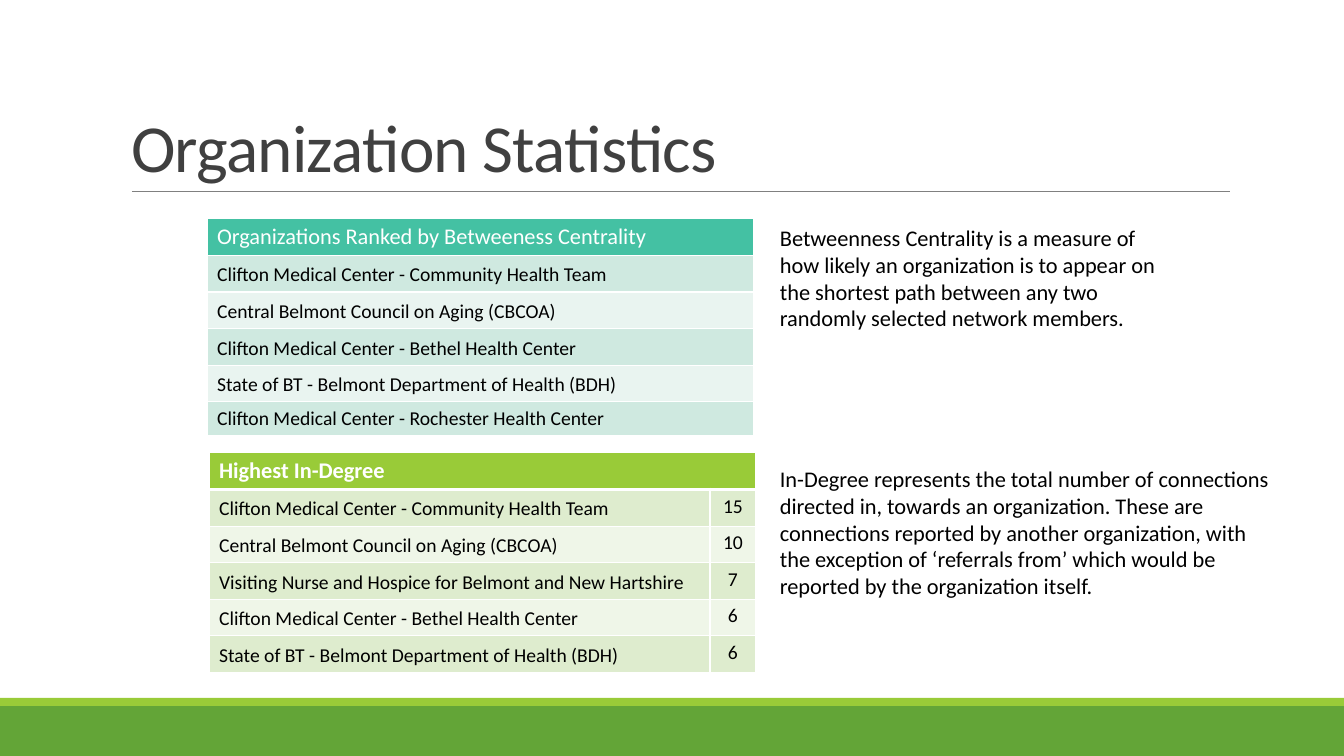
from pptx import Presentation
from pptx.dml.color import RGBColor
from pptx.enum.shapes import MSO_CONNECTOR, MSO_SHAPE
from pptx.enum.text import MSO_ANCHOR, MSO_AUTO_SIZE, PP_ALIGN
from pptx.oxml.ns import qn
from pptx.util import Pt
from lxml.etree import SubElement

TITLE = "Organization Statistics"
BARS = [((0, 706, 1344, 50), "63A537"), ((0, 698, 1344, 8), "99CB38")]
RULE = (132, 191, 1230, 191)
TABLES = [
    {
        "at": (209, 452), "cols": [501, 46], "last": 37, "rule": 3, "bold": True,
        "head": "Highest In-Degree", "fills": ["99CB38", "DEECCE", "EFF6E8"],
        "rows": [
            ("Clifton Medical Center - Community Health Team", "15"),
            ("Central Belmont Council on Aging (CBCOA)", "10"),
            ("Visiting Nurse and Hospice for Belmont and New Hartshire", "7"),
            ("Clifton Medical Center - Bethel Health Center", "6"),
            ("State of BT - Belmont Department of Health (BDH)", "6"),
        ],
    },
    {
        "at": (207, 218), "cols": [547], "last": 34, "rule": 1, "bold": False,
        "head": "Organizations Ranked by Betweeness Centrality",
        "fills": ["44C1A3", "CFE9E0", "E9F4F0"],
        "rows": [
            ("Clifton Medical Center - Community Health Team",),
            ("Central Belmont Council on Aging (CBCOA)",),
            ("Clifton Medical Center - Bethel Health Center",),
            ("State of BT - Belmont Department of Health (BDH)",),
            ("Clifton Medical Center - Rochester Health Center",),
        ],
    },
]
NOTES = [
    ((770, 460, 519, 146), "In-Degree represents the total number of connections directed in, "
     "towards an organization. These are connections reported by another organization, with the "
     "exception of ‘referrals from’ which would be reported by the organization itself."),
    ((770, 219, 399, 119), "Betweenness Centrality is a measure of how likely an organization is "
     "to appear on the shortest path between any two randomly selected network members."),
]


def px(n):
    return round(n * 914400 / 100.8)


def box(*lengths):
    return [px(n) for n in lengths]


def rgb(value):
    return RGBColor.from_string(value)


def style(p, size, color, bold=False):
    f = p.runs[0].font
    f.name, f.size, f.bold = "Calibri", Pt(size), bold
    f.color.rgb = rgb(color)


def add_borders(cell, top, bottom):
    tcPr = cell._tc.get_or_add_tcPr()
    for side, width in (("L", 1), ("R", 1), ("T", top), ("B", bottom)):
        ln = SubElement(tcPr, qn(f"a:ln{side}"), w=str(Pt(width)))
        SubElement(SubElement(ln, qn("a:solidFill")), qn("a:srgbClr"), val="FFFFFF")


def add_ranking(s, data):
    rows = [(data["head"],)] + data["rows"]
    cols = data["cols"]
    heights = [px(183) // 5] * 5 + [px(data["last"])]
    frame = s.shapes.add_table(len(rows), len(cols), *box(*data["at"], sum(cols)), sum(heights))
    table = frame.table
    for col, width in zip(table.columns, cols):
        col.width = px(width)
    for i, values in enumerate(rows):
        table.rows[i].height = heights[i]
        fill = data["fills"][0 if i == 0 else 2 - i % 2]
        for j in range(len(cols)):
            cell = table.cell(i, j)
            add_borders(cell, data["rule"] if i == 1 else 1, data["rule"] if i == 0 else 1)
            cell.fill.solid()
            cell.fill.fore_color.rgb = rgb(fill)
            if j >= len(values):
                continue
            cell.text_frame.text = values[j]
            p = cell.text_frame.paragraphs[0]
            if i == 0:
                style(p, 16, "FFFFFF", data["bold"])
            else:
                style(p, 14, "000000")
                cell.vertical_anchor = MSO_ANCHOR.TOP if j else MSO_ANCHOR.BOTTOM
                p.alignment = PP_ALIGN.CENTER if j else PP_ALIGN.LEFT
    if len(cols) > 1:
        table.cell(0, 0).merge(table.cell(0, len(cols) - 1))


def add_note(s, at, text):
    tf = s.shapes.add_textbox(*box(*at)).text_frame
    tf.word_wrap = True
    tf.auto_size = MSO_AUTO_SIZE.SHAPE_TO_FIT_TEXT
    tf.text = text
    style(tf.paragraphs[0], 16, "000000")


def main():
    prs = Presentation()
    prs.slide_width, prs.slide_height = box(1344, 756)
    s = prs.slides.add_slide(prs.slide_layouts[5])

    title = s.shapes.title
    title.left, title.top, title.width, title.height = box(121, 31, 1109, 160)
    tf = title.text_frame
    tf.text = TITLE
    tf.auto_size = MSO_AUTO_SIZE.NONE
    tf.vertical_anchor = MSO_ANCHOR.BOTTOM
    p = tf.paragraphs[0]
    p.alignment = PP_ALIGN.LEFT
    p.line_spacing = 0.85
    style(p, 48, "404040")
    p.runs[0].font._element.set("spc", "-50")

    for at, color in BARS:
        bar = s.shapes.add_shape(MSO_SHAPE.RECTANGLE, *box(*at))
        bar.shadow.inherit = False
        bar.fill.solid()
        bar.fill.fore_color.rgb = rgb(color)
        bar.line.fill.background()

    rule = s.shapes.add_connector(MSO_CONNECTOR.STRAIGHT, *box(*RULE))
    rule.line.color.rgb = rgb("808080")
    rule.line.width = Pt(0.5)
    SubElement(rule._element.spPr, qn("a:effectLst"))

    for data in TABLES:
        add_ranking(s, data)
    for at, text in NOTES:
        add_note(s, at, text)
    prs.save("out.pptx")


if __name__ == "__main__":
    main()
